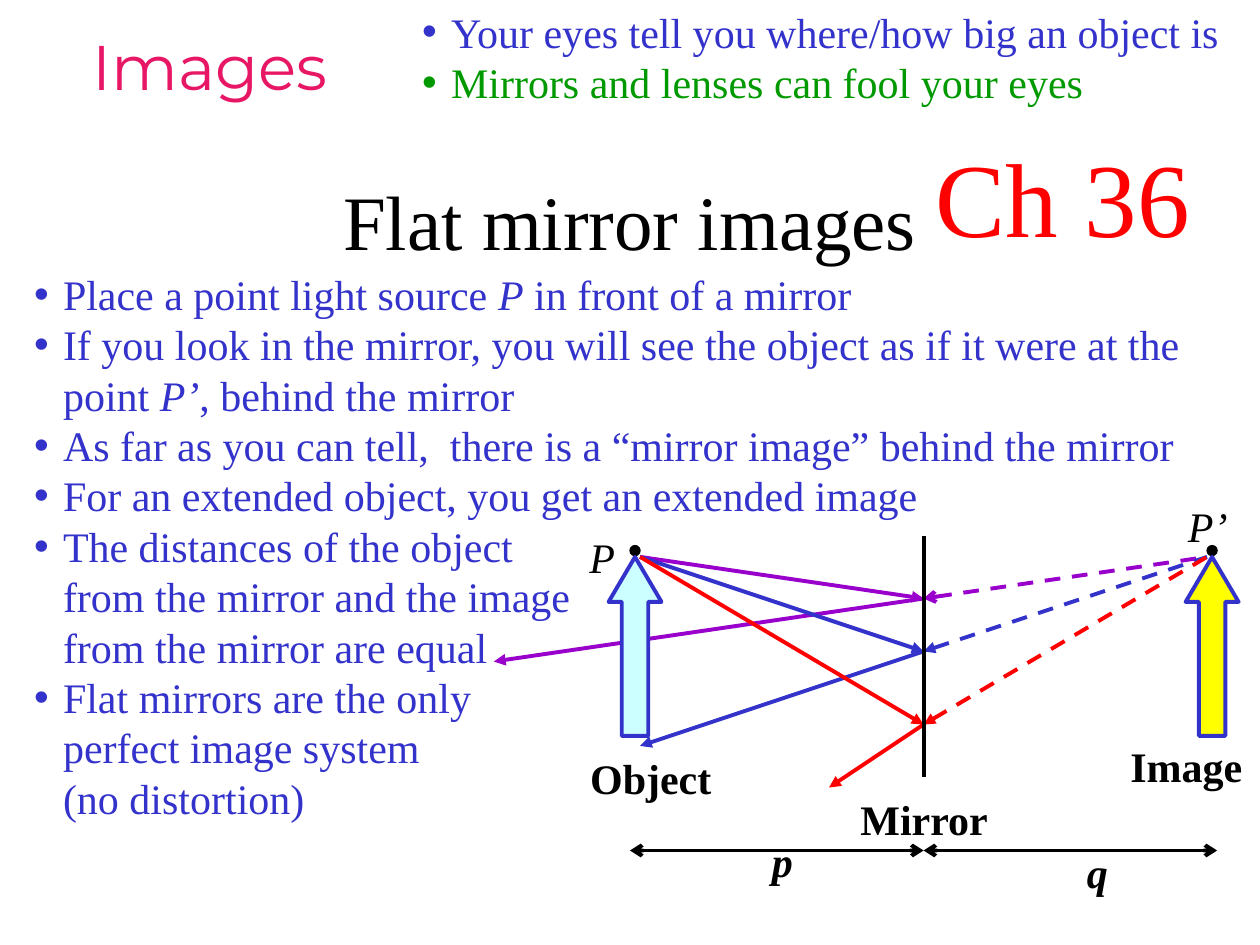
import copy

import pptx
import pptx.dml.color
import pptx.enum.dml
import pptx.enum.shapes
import pptx.enum.text
import pptx.oxml
import pptx.oxml.ns
import pptx.util
from pptx.util import Inches

COLOURS = {
    "heading": "E81766", "black": "000000", "blue": "3333CC", "green": "009900",
    "purple": "9900CC", "red": "FF0000", "object": "CCFFFF", "image": "FFFF00",
}
SERIF = "Times New Roman"
HANGING = 0.23
ALIGN = pptx.enum.text.PP_ALIGN
SHAPE = pptx.enum.shapes.MSO_SHAPE
qn = pptx.oxml.ns.qn


def colour(name):
    return pptx.dml.color.RGBColor.from_string(COLOURS[name])


def add_xml(parent, tag, **attributes):
    element = pptx.oxml.parse_xml(f'<a:{tag} {pptx.oxml.ns.nsdecls("a")}/>')
    for key, value in attributes.items():
        element.set(key, value)
    parent.append(element)
    return element


def move(shape, left, top, width, height):
    box = {"left": left, "top": top, "width": width, "height": height}
    for side, inches in box.items():
        setattr(shape, side, Inches(inches))


def set_frame(frame, wrap=True):
    settings = {
        "word_wrap": wrap,
        "auto_size": pptx.enum.text.MSO_AUTO_SIZE.SHAPE_TO_FIT_TEXT,
        "vertical_anchor": pptx.enum.text.MSO_ANCHOR.TOP,
        "margin_left": Inches(0.1), "margin_right": Inches(0.1),
        "margin_top": Inches(0.05), "margin_bottom": Inches(0.05),
    }
    for name, value in settings.items():
        setattr(frame, name, value)


def add_run(paragraph, text, ink, size=24, font=SERIF, **style):
    run = paragraph.add_run()
    run.text = text
    for name, value in {"size": pptx.util.Pt(size), "name": font, **style}.items():
        setattr(run.font, name, value)
    run.font.color.rgb = colour(ink)
    return run


def write(shape, text, ink, align=ALIGN.CENTER, wrap=True, **style):
    set_frame(shape.text_frame, wrap)
    paragraph = shape.text_frame.paragraphs[0]
    paragraph.alignment = align
    add_run(paragraph, text, ink, **style)


def add_label(slide, box, text, ink="black", **style):
    label = slide.shapes.add_textbox(*map(Inches, box))
    write(label, text, ink, **style)


def fill_bullets(placeholder, box, items):
    """Each item is (colour, text); *asterisks* mark italics, newlines break lines."""
    move(placeholder, *box)
    frame = placeholder.text_frame
    set_frame(frame)
    for number, (ink, text) in enumerate(items):
        paragraph = frame.add_paragraph() if number else frame.paragraphs[0]
        paragraph.space_before = pptx.util.Pt(0)
        paragraph.alignment = ALIGN.LEFT
        properties = paragraph._p.get_or_add_pPr()
        properties.set("marL", str(Inches(HANGING)))
        properties.set("indent", str(-Inches(HANGING)))
        add_xml(properties, "buChar", char="•")
        for line_number, line in enumerate(text.split("\n")):
            if line_number:
                paragraph.add_line_break()
            for part_number, part in enumerate(line.split("*")):
                run = add_run(paragraph, part, ink, italic=part_number % 2 == 1)
        # Line breaks take the size of the text around them
        for line_break in paragraph._p.findall(qn("a:br")):
            line_break.insert(0, copy.deepcopy(run._r.rPr))


def add_line(slide, start, end, ink, head=None, tail=None, dashed=False):
    line = slide.shapes.add_connector(
        pptx.enum.shapes.MSO_CONNECTOR.STRAIGHT, *map(Inches, (*start, *end)))
    line.line.color.rgb = colour(ink)
    line.line.width = pptx.util.Pt(2.25)
    if dashed:
        line.line.dash_style = pptx.enum.dml.MSO_LINE.DASH
    for tag, kind in {"headEnd": head, "tailEnd": tail}.items():
        if kind:
            add_xml(line.line._get_or_add_ln(), tag, type=kind)
    add_xml(line._element.spPr, "effectLst")


def add_figure(slide, kind, box, fill, outline, weight):
    figure = slide.shapes.add_shape(kind, *map(Inches, box))
    figure.shadow.inherit = False
    figure.fill.solid()
    figure.fill.fore_color.rgb = colour(fill)
    figure.line.color.rgb = colour(outline)
    figure.line.width = pptx.util.Pt(weight)
    return figure


def draw_mirror_diagram(slide, left, top):
    def at(x, y):
        return left + x, top + y

    mirror_x, tip_y, reach = 2.75, 0.5, 2.25
    object_tip, image_tip = at(mirror_x - reach, tip_y), at(mirror_x + reach, tip_y)

    # Rays: incident, virtual (dashed) and reflected
    rays = [
        ("purple", 0.83, (-0.66, 1.33), "arrow"),
        ("blue", 1.25, (0.5, 2), "triangle"),
        ("red", 1.83, (2, 2.33), "triangle"),
    ]
    for ink, hit_y, eye, virtual_head in rays:
        hit = at(mirror_x, hit_y)
        add_line(slide, hit, object_tip, ink, head="triangle")
        add_line(slide, hit, image_tip, ink, head=virtual_head, dashed=True)
        add_line(slide, at(*eye), hit, ink, head="triangle")

    # Object and image, with their tip points and distances to the mirror
    for side, fill in ((-1, "object"), (1, "image")):
        centre_x = mirror_x + side * 2.29
        add_figure(slide, SHAPE.OVAL, (*at(centre_x - 0.04, 0.41), 0.08, 0.08),
                   "black", "black", 0.75)
        arrow = add_figure(slide, SHAPE.UP_ARROW, (*at(centre_x - 0.21, tip_y), 0.42, 1.42),
                           fill, "blue", 2.25)
        arrow.adjustments[0], arrow.adjustments[1] = 0.5, 0.85
        ends = sorted((mirror_x, mirror_x + side * 2.33))
        add_line(slide, at(ends[0], 2.83), at(ends[1], 2.83), "black", "arrow", "arrow")

    # Mirror
    add_line(slide, at(mirror_x, 0.33), at(mirror_x, 2.25), "black")

    # Labels
    point = {"italic": True, "align": ALIGN.LEFT}
    name = {"bold": True}
    distance = {"bold": True, "italic": True}
    labels = [
        ("P", 0, 0.25, 0.67, point), ("P’", 4.75, 0, 0.67, point),
        ("Object", 0, 2, 1.17, name), ("Image", 4.25, 1.91, 1.17, name),
        ("Mirror", 1.92, 2.33, 1.67, name),
        ("p", 1.42, 2.66, 0.42, distance), ("q", 3.92, 2.75, 0.42, distance),
    ]
    for text, x, y, width, style in labels:
        add_label(slide, (*at(x, y), width, 0.5), text, **style)


def main():
    deck = pptx.Presentation()
    deck.slide_width, deck.slide_height = Inches(10), Inches(7.5)
    slide = deck.slides.add_slide(deck.slide_layouts.get_by_name("Two Content"))
    title, intro, explanation = slide.placeholders

    # Headings
    add_label(slide, (0.25, 0.17, 2.83, 1.42), "Images", "heading",
              size=36, font="Montserrat", wrap=False)
    move(title, 0, 1.33, 10, 0.83)
    write(title, "Flat mirror images", "black", size=44)
    add_label(slide, (7.33, 1, 2.5, 1.11), "Ch 36", "red", size=60, align=ALIGN.LEFT)

    # Bullet lists
    fill_bullets(intro, (3.25, 0, 6.67, 0.91), [
        ("blue", "Your eyes tell you where/how big an object is"),
        ("green", "Mirrors and lenses can fool your eyes"),
    ])
    fill_bullets(explanation, (0.17, 2.08, 9.83, 4.49), [("blue", text) for text in (
        "Place a point light source *P* in front of a mirror",
        "If you look in the mirror, you will see the object as if it were at the "
        "point *P’*, behind the mirror",
        "As far as you can tell,  there is a “mirror image” behind the mirror",
        "For an extended object, you get an extended image",
        "The distances of the object\nfrom the mirror and the image\nfrom the mirror are equal",
        "Flat mirrors are the only\nperfect image system\n(no distortion)",
    )])

    draw_mirror_diagram(slide, 4.58, 3.92)
    deck.save("out.pptx")


if __name__ == "__main__":
    main()
